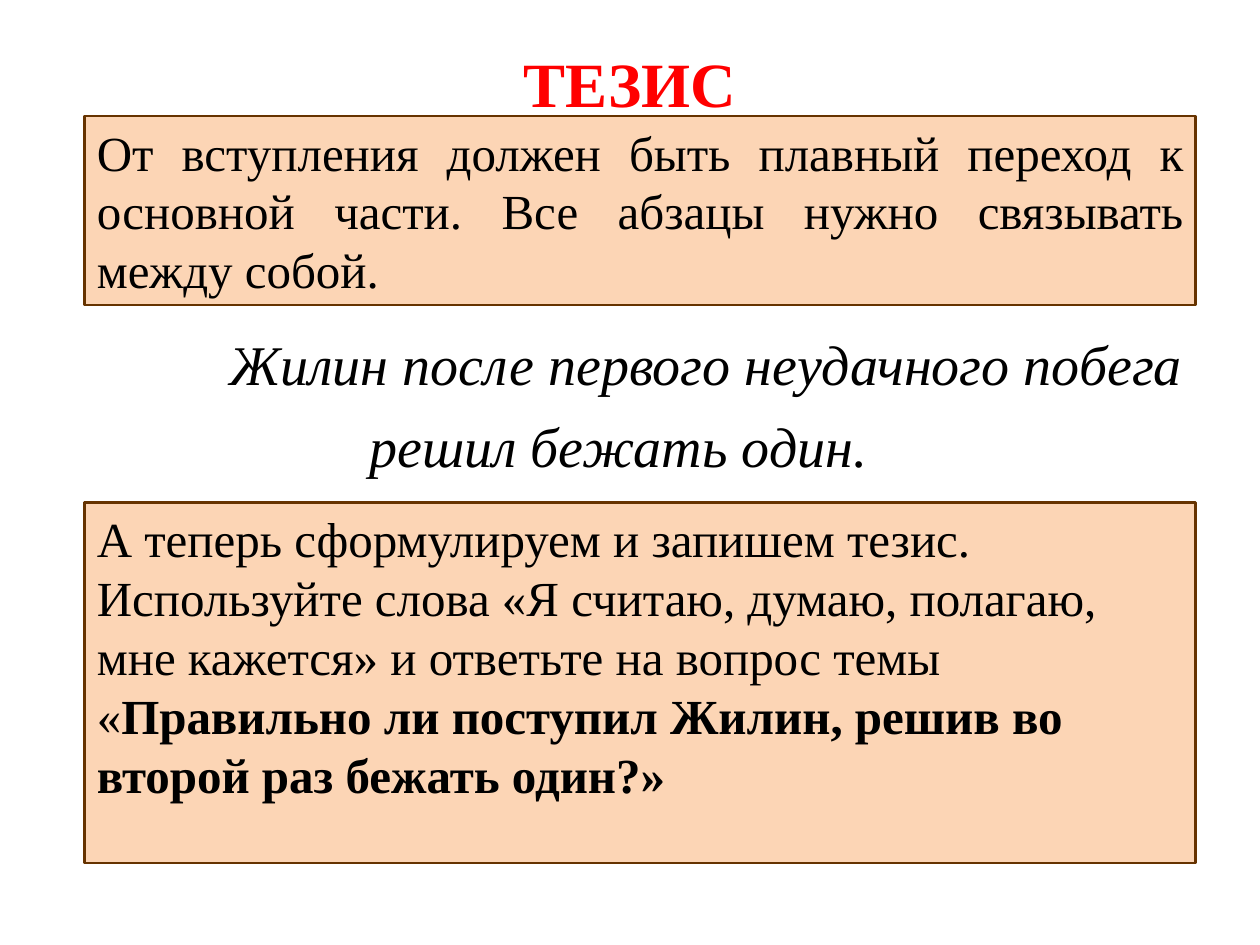
from pptx import Presentation
from pptx.dml.color import RGBColor
from pptx.enum.shapes import MSO_SHAPE
from pptx.enum.text import MSO_ANCHOR, PP_ALIGN
from pptx.util import Pt

FONT = "Times New Roman"
RED = RGBColor(0xFF, 0x00, 0x00)
BLACK = RGBColor(0x00, 0x00, 0x00)
PEACH = RGBColor(0xFC, 0xD5, 0xB5)
BROWN = RGBColor(0x66, 0x33, 0x00)

TITLE = "ТЕЗИС"
# Example lines: text, left indent, space before
EXAMPLE = [
    ("Жилин после первого неудачного побега", 8, 0),
    ("решил бежать один.", 88, 8),
]
# Panels: top, height, alignment, runs of (text, bold)
PANELS = [
    (66.24, 108, PP_ALIGN.JUSTIFY, [
        ("От вступления должен быть плавный переход к основной части. "
         "Все абзацы нужно связывать между собой.", False),
    ]),
    (287.28, 205.92, PP_ALIGN.LEFT, [
        ("А теперь сформулируем и запишем тезис. Используйте слова «Я считаю, "
         "думаю, полагаю, мне кажется» и ответьте на вопрос темы «", False),
        ("Правильно ли поступил Жилин, решив во второй раз бежать один?»", True),
    ]),
]
PANEL_LEFT, PANEL_WIDTH = 48.24, 635.04


def add_span(para, text, size, color=BLACK, bold=False, italic=False):
    span = para.add_run()
    span.text = text
    font = span.font
    font.name, font.size, font.bold, font.italic = FONT, Pt(size), bold, italic
    font.color.rgb = color


def place(shape, left, top, width, height):
    shape.left, shape.top = Pt(left), Pt(top)
    shape.width, shape.height = Pt(width), Pt(height)


def add_title(page):
    title = page.shapes.title
    place(title, 36, 21.6, 648, 90)
    title.text_frame.vertical_anchor = MSO_ANCHOR.TOP
    para = title.text_frame.paragraphs[0]
    para.alignment = PP_ALIGN.CENTER
    add_span(para, TITLE, 36, RED, bold=True)


def add_example(page):
    box = page.shapes.add_textbox(Pt(115.92), Pt(185.04), Pt(604.08), Pt(110.16))
    frame = box.text_frame
    frame.word_wrap = True
    for number, (text, indent, gap) in enumerate(EXAMPLE):
        para = frame.add_paragraph() if number else frame.paragraphs[0]
        para._p.get_or_add_pPr().set("marL", str(Pt(indent)))
        para.space_before = Pt(gap)
        add_span(para, text, 32, italic=True)


def add_panel(page, top, height, alignment, spans):
    panel = page.shapes.add_shape(MSO_SHAPE.RECTANGLE, Pt(PANEL_LEFT), Pt(top),
                                  Pt(PANEL_WIDTH), Pt(height))
    panel.shadow.inherit = False
    panel.fill.solid()
    panel.fill.fore_color.rgb = PEACH
    panel.line.color.rgb = BROWN
    panel.line.width = Pt(1.5)
    frame = panel.text_frame
    frame.word_wrap = True
    frame.vertical_anchor = MSO_ANCHOR.TOP
    para = frame.paragraphs[0]
    para.alignment = alignment
    for text, bold in spans:
        add_span(para, text, 28, bold=bold)


def main():
    deck = Presentation()
    deck.slide_width, deck.slide_height = Pt(720), Pt(540)
    page = deck.slides.add_slide(deck.slide_layouts[5])
    add_title(page)
    add_example(page)
    for panel in PANELS:
        add_panel(page, *panel)
    deck.save("out.pptx")


if __name__ == "__main__":
    main()
